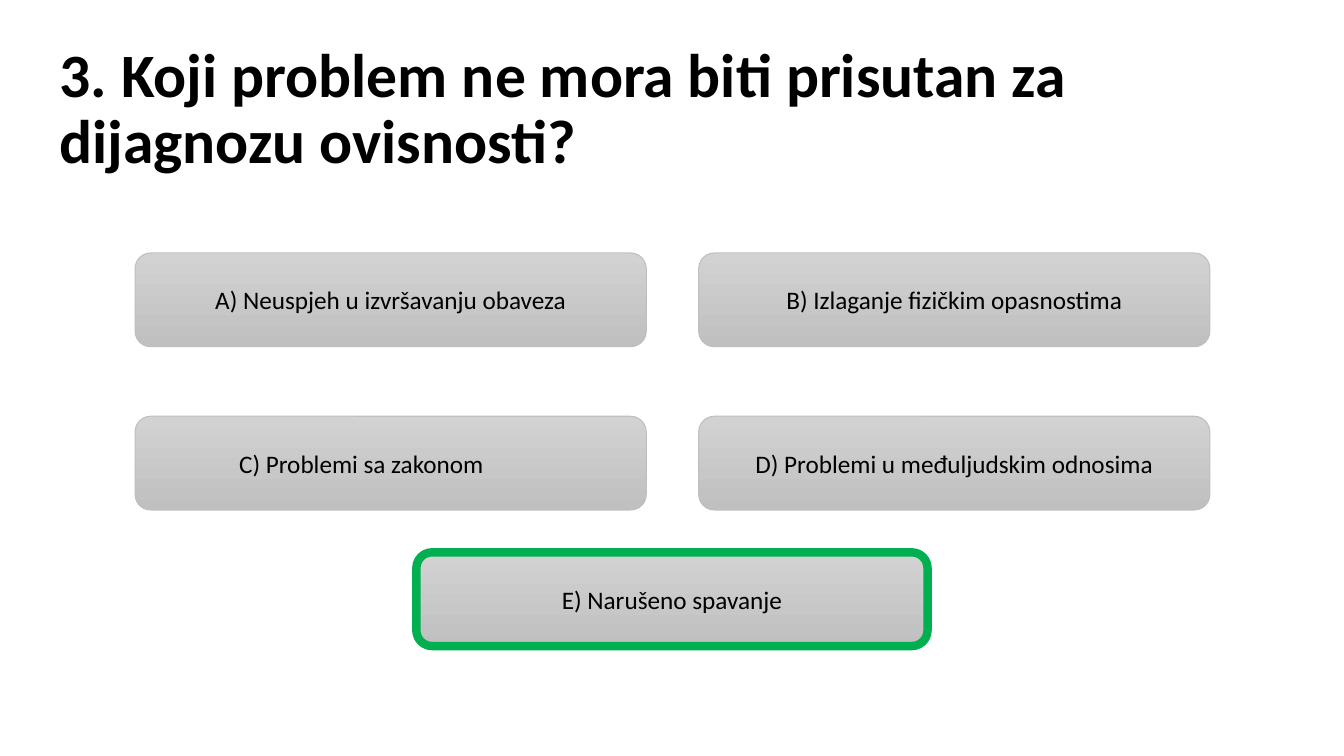
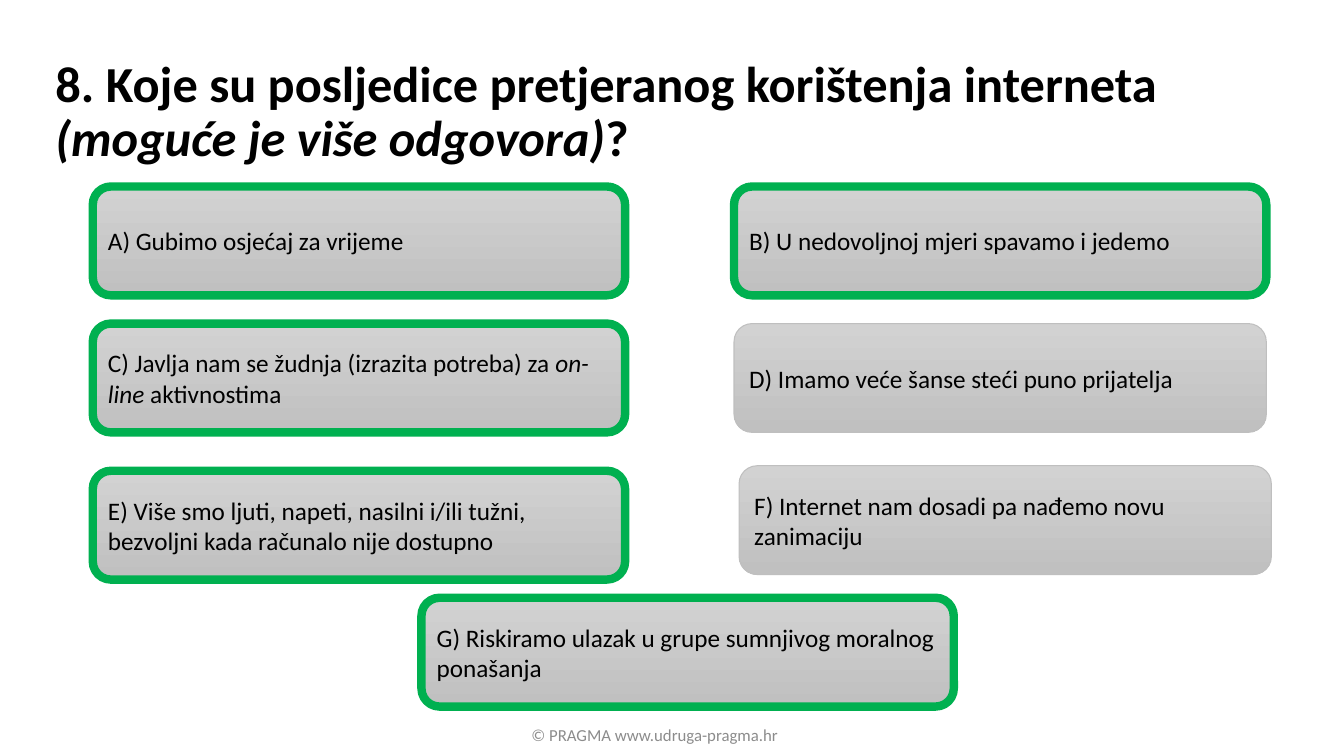
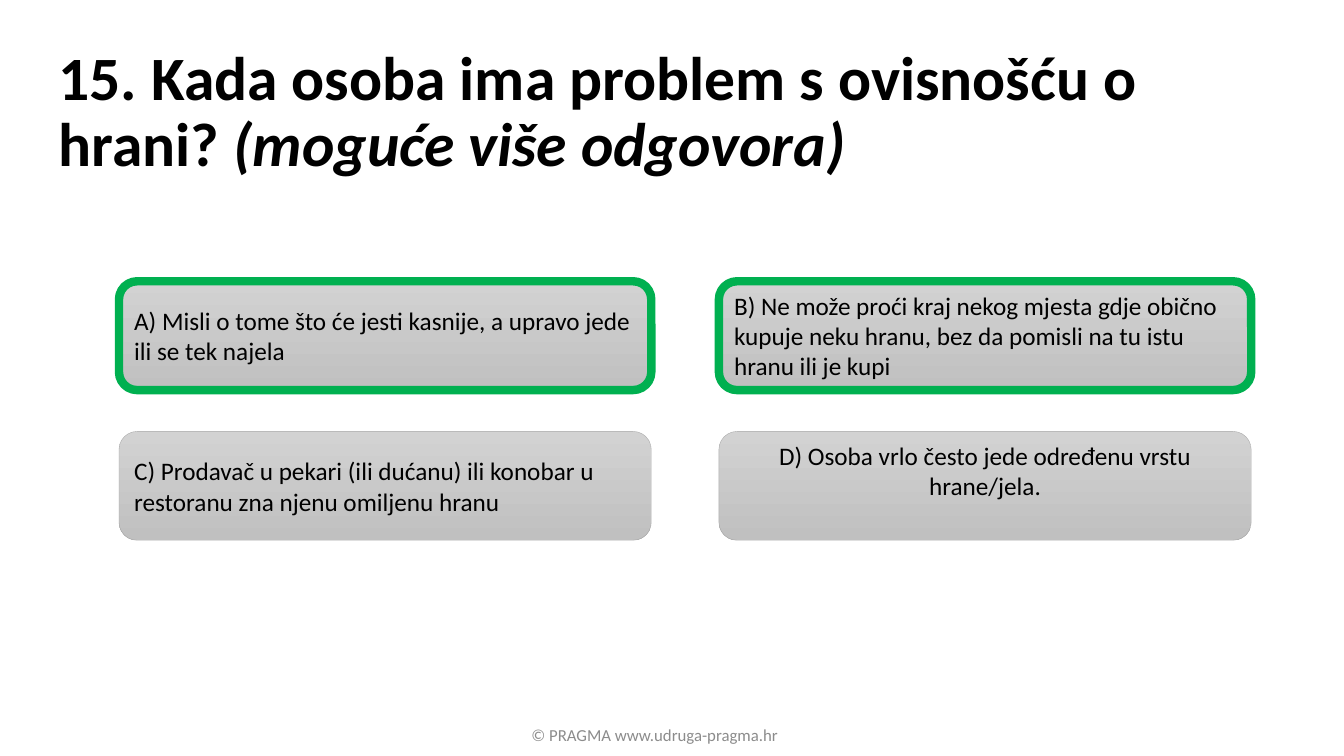
"""Build three quiz slides with answer cards and the correct answers outlined."""
from pptx import Presentation
from pptx import util as u
from pptx.dml.color import RGBColor
from pptx.enum import shapes, text

WIDTH, HEIGHT = 13.33, 7.5
FONT = "Calibri"
COLORS = {
    "text": "000000", "footer": "8C8C8C", "correct": "00B050",
    "card_top": "D2D2D2", "card_bottom": "C0C0C0",
    "edge": "BFBFBF", "dark_edge": "A6A6A6",
}
LEFT, CENTER = text.PP_ALIGN.LEFT, text.PP_ALIGN.CENTER
FOOTER = "© PRAGMA www.udruga-pragma.hr"
FOOTER_BOX = (4.91, 7.09, 3.17, 0.4)

# Asterisks enclose italic wording; an odd last answer takes the "last" place.
QUIZ = [
    {
        "title": "3. Koji problem ne mora biti prisutan za dijagnozu ovisnosti?",
        "title_box": (0.49, 0.37, 12.69, 1.45), "title_size": 44,
        "columns": (1.34, 6.93), "rows": (2.51, 4.13), "last": (4.13, 5.48),
        "card": (5.07, 0.93), "align": CENTER, "edge": ("edge", 0.75),
        "footer": False, "correct": "E",
        "answers": [
            "A) Neuspjeh u izvršavanju obaveza",
            "B) Izlaganje fizičkim opasnostima",
            "C) Problemi sa zakonom",
            "D) Problemi u međuljudskim odnosima",
            "E) Narušeno spavanje",
        ],
        "special": {"C": {"right": 0.68}},
    },
    {
        "title": "8. Koje su posljedice pretjeranog korištenja interneta "
                 "*(moguće je više odgovora)*?",
        "title_box": (0.45, 0.4, 12.88, 1.45), "title_size": 36,
        "columns": (0.92, 7.28), "rows": (1.85, 3.21, 4.67), "last": (4.18, 5.93),
        "card": (5.28, 1.08), "align": LEFT, "edge": ("edge", 0.75),
        "footer": True, "correct": "ABCEG",
        "answers": [
            "A) Gubimo osjećaj za vrijeme",
            "B) U nedovoljnoj mjeri spavamo i jedemo",
            "C) Javlja nam se žudnja (izrazita potreba) za *on-line *aktivnostima",
            "D) Imamo veće šanse steći puno prijatelja",
            "E) Više smo ljuti, napeti, nasilni i/ili tužni, "
            "bezvoljni kada računalo nije dostupno",
            "F) Internet nam dosadi pa nađemo novu zanimaciju",
            "G) Riskiramo ulazak u grupe sumnjivog moralnog ponašanja",
        ],
        "special": {"F": {"shift": (0.05, -0.05)}},
    },
    {
        "title": "15. Kada osoba ima problem s ovisnošću o hrani? "
                 "*(moguće više odgovora)*",
        "title_box": (0.48, 0.4, 12.25, 1.45), "title_size": 44,
        "columns": (1.18, 7.13), "rows": (2.79, 4.28), "last": None,
        "card": (5.28, 1.08), "align": LEFT, "edge": ("dark_edge", 0.25),
        "footer": True, "correct": "AB",
        "answers": [
            "A) Misli o tome što će jesti kasnije, a upravo jede ili se tek najela",
            "B) Ne može proći kraj nekog mjesta gdje obično kupuje neku hranu, "
            "bez da pomisli na tu istu hranu ili je kupi",
            "C) Prodavač u pekari (ili dućanu) ili konobar u restoranu "
            "zna njenu omiljenu hranu",
            "D) Osoba vrlo često jede određenu vrstu hrane/jela.",
        ],
        "special": {"D": {"align": CENTER, "bottom": 0.35}},
    },
]


def color(name):
    return RGBColor.from_string(COLORS[name])


def inches(values):
    return [u.Inches(value) for value in values]


def write(shape, wording, size, align, color_name="text", bold=False):
    frame = shape.text_frame
    frame.word_wrap = True
    frame.auto_size = text.MSO_AUTO_SIZE.NONE
    frame.vertical_anchor = text.MSO_ANCHOR.MIDDLE
    paragraph = frame.paragraphs[0]
    paragraph.alignment = align
    for index, part in enumerate(wording.split("*")):
        if part:
            run = paragraph.add_run()
            run.text = part
            run.font.name, run.font.size = FONT, u.Pt(size)
            run.font.bold, run.font.italic = bold, index % 2 == 1
            run.font.color.rgb = color(color_name)
    return paragraph


def add_title(slide, question):
    title = slide.shapes.title
    title.left, title.top, title.width, title.height = inches(question["title_box"])
    paragraph = write(title, question["title"], question["title_size"], LEFT, bold=True)
    paragraph.line_spacing = 0.9


def add_card(slide, question, index, answer):
    letter = answer[0]
    special = question["special"].get(letter, {})
    row, column = divmod(index, len(question["columns"]))
    if row < len(question["rows"]):
        left, top = question["columns"][column], question["rows"][row]
    else:
        left, top = question["last"]
    shift_x, shift_y = special.get("shift", (0, 0))
    card = slide.shapes.add_shape(
        shapes.MSO_SHAPE.ROUNDED_RECTANGLE,
        *inches((left + shift_x, top + shift_y, *question["card"])))
    card.shadow.inherit = False
    card.fill.gradient()
    card.fill.gradient_angle = 270
    for stop, name in zip(card.fill.gradient_stops, ("card_top", "card_bottom")):
        stop.color.rgb = color(name)
    edge, weight = ("correct", 6) if letter in question["correct"] else question["edge"]
    card.line.color.rgb = color(edge)
    card.line.width = u.Pt(weight)
    card.text_frame.margin_right = u.Inches(special.get("right", 0.1))
    card.text_frame.margin_bottom = u.Inches(special.get("bottom", 0.05))
    write(card, answer, 18, special.get("align", question["align"]))


def main():
    presentation = Presentation()
    presentation.slide_width, presentation.slide_height = inches((WIDTH, HEIGHT))
    for question in QUIZ:
        slide = presentation.slides.add_slide(presentation.slide_layouts[5])
        add_title(slide, question)
        for index, answer in enumerate(question["answers"]):
            add_card(slide, question, index, answer)
        if question["footer"]:
            footer = slide.shapes.add_textbox(*inches(FOOTER_BOX))
            write(footer, FOOTER, 12, CENTER, "footer")
    presentation.save("out.pptx")


if __name__ == "__main__":
    main()
